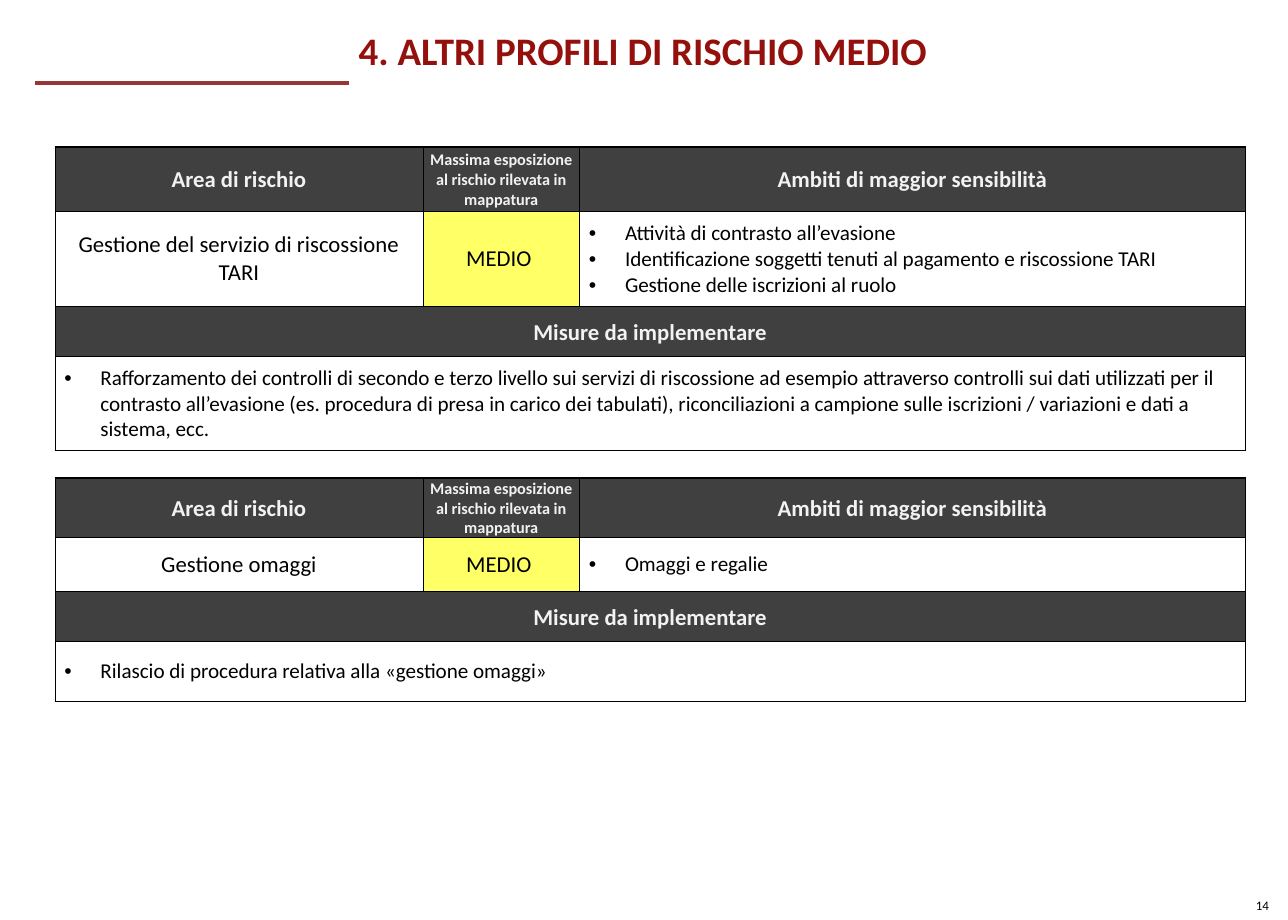
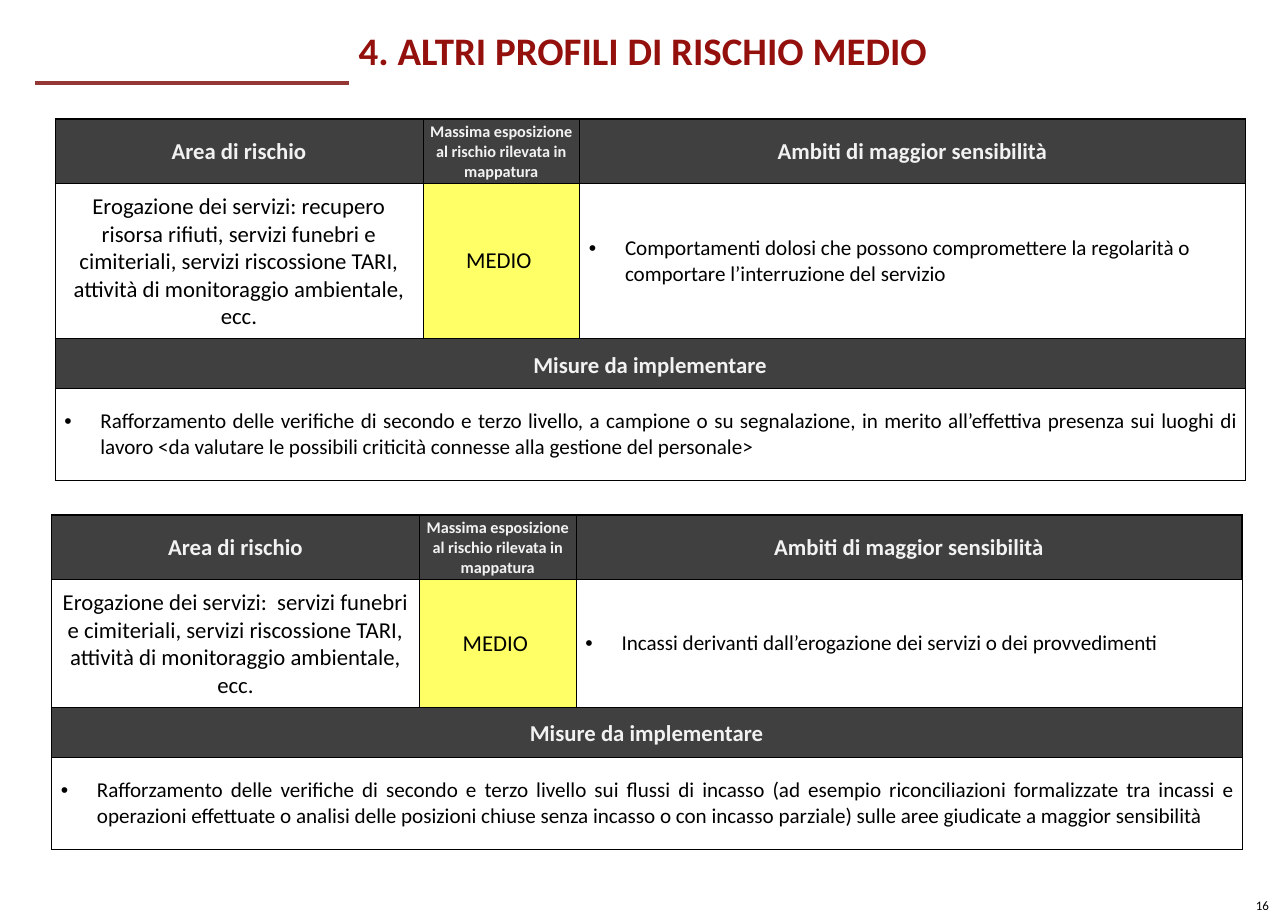
from lxml import etree
from pptx import Presentation
from pptx import util as u
from pptx.dml.color import RGBColor
from pptx.enum import shapes, text
from pptx.oxml import ns

FONT = "Calibri"
RED = RGBColor(0x93, 0x10, 0x0D)
RULE_RED = RGBColor(0x95, 0x37, 0x35)
DARK = RGBColor(0x40, 0x40, 0x40)
PALE = RGBColor(0xF2, 0xF2, 0xF2)
YELLOW = RGBColor(0xFF, 0xFF, 0x66)
WHITE = RGBColor(0xFF, 0xFF, 0xFF)
BLACK = RGBColor(0, 0, 0)

LEFT, CENTER, JUSTIFY = text.PP_ALIGN.LEFT, text.PP_ALIGN.CENTER, text.PP_ALIGN.JUSTIFY
TITLE = "4. ALTRI PROFILI DI RISCHIO MEDIO"
HEADERS = [
    ("Area di rischio", 14),
    ("Massima esposizione al rischio rilevata in mappatura", 10),
    ("Ambiti di maggior sensibilità", 14),
]
COLUMNS = [3.15, 1.34, 5.7]

SLIDES = [
    ("14", [
        dict(left=0.47, top=1.26, rows=[0.55, 0.81, 0.42, 0.81], align=LEFT,
             area="Gestione del servizio di riscossione TARI",
             scopes=["Attività di contrasto all’evasione",
                     "Identificazione soggetti tenuti al pagamento e riscossione TARI",
                     "Gestione delle iscrizioni al ruolo"],
             measure="Rafforzamento dei controlli di secondo e terzo livello sui servizi di "
                     "riscossione ad esempio attraverso controlli sui dati utilizzati per il "
                     "contrasto all’evasione (es. procedura di presa in carico dei tabulati), "
                     "riconciliazioni a campione sulle iscrizioni / variazioni e dati a sistema, ecc."),
        dict(left=0.47, top=4.09, rows=[0.51, 0.46, 0.43, 0.51], align=JUSTIFY,
             area="Gestione omaggi",
             scopes=["Omaggi e regalie"],
             measure="Rilascio di procedura relativa alla «gestione omaggi»"),
    ]),
    ("16", [
        dict(left=0.47, top=1.02, rows=[0.55, 1.32, 0.42, 0.79], align=JUSTIFY,
             area="Erogazione dei servizi: recupero risorsa rifiuti, servizi funebri e cimiteriali, "
                  "servizi riscossione TARI, attività di monitoraggio ambientale, ecc.",
             scopes=["Comportamenti dolosi che possono compromettere la regolarità o comportare "
                     "l’interruzione del servizio"],
             measure="Rafforzamento delle verifiche di secondo e terzo livello, a campione o su "
                     "segnalazione, in merito all’effettiva presenza sui luoghi di lavoro <da valutare "
                     "le possibili criticità connesse alla gestione del personale>"),
        dict(left=0.44, top=4.41, rows=[0.55, 1.09, 0.42, 0.79], align=JUSTIFY,
             area="Erogazione dei servizi:  servizi funebri e cimiteriali, servizi riscossione TARI, "
                  "attività di monitoraggio ambientale, ecc.",
             scopes=["Incassi derivanti dall’erogazione dei servizi o dei provvedimenti"],
             measure="Rafforzamento delle verifiche di secondo e terzo livello sui flussi di incasso "
                     "(ad esempio riconciliazioni formalizzate tra incassi e operazioni effettuate o "
                     "analisi delle posizioni chiuse senza incasso o con incasso parziale) sulle aree "
                     "giudicate a maggior sensibilità"),
    ]),
]


def write(frame, lines, size, color=BLACK, bold=False, align=LEFT, bullet=False):
    frame.text = "\n".join(lines)
    for para in frame.paragraphs:
        para.alignment = align
        if bullet:
            props = para._p.get_or_add_pPr()
            props.set("marL", str(u.Inches(0.31)))
            props.set("indent", str(-u.Inches(0.31)))
            etree.SubElement(props, ns.qn("a:buFont")).set("typeface", "Arial")
            etree.SubElement(props, ns.qn("a:buChar")).set("char", "•")
        for span in para.runs:
            span.font.name = FONT
            span.font.size = u.Pt(size)
            span.font.bold = bold
            span.font.color.rgb = color


def style_cell(cell, fill, header, right_edge):
    cell.vertical_anchor = text.MSO_ANCHOR.MIDDLE
    margin = u.Inches(0.01 if header else 0.08)
    cell.margin_left = cell.margin_right = cell.margin_top = margin
    cell.margin_bottom = 0 if header else margin
    if fill is None:
        cell.fill.background()
    else:
        cell.fill.solid()
        cell.fill.fore_color.rgb = fill
    props = cell._tc.get_or_add_tcPr()
    for place, side in enumerate("LRTB"):
        thick = header and (side == "T" or side == "R" and right_edge)
        line = etree.Element(ns.qn("a:ln" + side), w=str(u.Pt(1 if thick else 0.5)))
        solid = etree.SubElement(line, ns.qn("a:solidFill"))
        etree.SubElement(solid, ns.qn("a:srgbClr")).set("val", str(BLACK))
        props.insert(place, line)


deck = Presentation()
deck.slide_width, deck.slide_height = u.Emu(10080625), u.Emu(7200900)

for number, risks in SLIDES:
    page = deck.slides.add_slide(deck.slide_layouts[6])

    number_box = page.shapes.add_textbox(u.Inches(10.65), u.Inches(7.63), u.Inches(0.35), u.Inches(0.24))
    number_box.text_frame.word_wrap = False
    write(number_box.text_frame, [number], 8)

    rule = page.shapes.add_connector(shapes.MSO_CONNECTOR.STRAIGHT, u.Inches(0.3), u.Inches(0.71),
                                     u.Inches(2.99), u.Inches(0.71))
    rule.line.color.rgb = RULE_RED
    rule.line.width = u.Pt(2.25)
    etree.SubElement(rule._element.spPr, ns.qn("a:effectLst"))

    title_box = page.shapes.add_textbox(u.Inches(3.07), u.Inches(0.21), u.Inches(8.27), u.Inches(0.59))
    frame = title_box.text_frame
    frame.word_wrap = True
    frame.margin_left = frame.margin_right = frame.margin_top = frame.margin_bottom = 0
    write(frame, [TITLE], 24, RED, bold=True)
    frame.paragraphs[0].line_spacing = u.Pt(30)

    for risk in risks:
        table = page.shapes.add_table(4, 3, u.Inches(risk["left"]), u.Inches(risk["top"]),
                                      u.Inches(sum(COLUMNS)), u.Inches(sum(risk["rows"]))).table
        table.first_row = table.horz_banding = False
        for column, width in zip(table.columns, COLUMNS):
            column.width = u.Inches(width)
        for row, height in zip(table.rows, risk["rows"]):
            row.height = u.Inches(height)

        fills = [[DARK] * 3, [None, YELLOW, WHITE], [DARK] * 3, [None] * 3]
        for r, row_fills in enumerate(fills):
            for c, fill in enumerate(row_fills):
                style_cell(table.cell(r, c), fill, r == 0, c == 2)
        for r in (2, 3):
            table.cell(r, 0).merge(table.cell(r, 2))

        for c, (label, size) in enumerate(HEADERS):
            write(table.cell(0, c).text_frame, [label], size, PALE, True, CENTER)
        write(table.cell(1, 0).text_frame, [risk["area"]], 14, align=CENTER)
        level = table.cell(1, 1)
        level.margin_right = u.Inches(0.12)
        write(level.text_frame, ["MEDIO"], 14, align=CENTER)
        write(table.cell(1, 2).text_frame, risk["scopes"], 13, bullet=True)
        heading = table.cell(2, 0).text_frame
        write(heading, ["Misure da implementare"], 14, PALE, True, CENTER)
        heading.paragraphs[0].line_spacing = u.Pt(19.2)
        write(table.cell(3, 0).text_frame, [risk["measure"]], 13, align=risk["align"], bullet=True)

deck.save("out.pptx")
